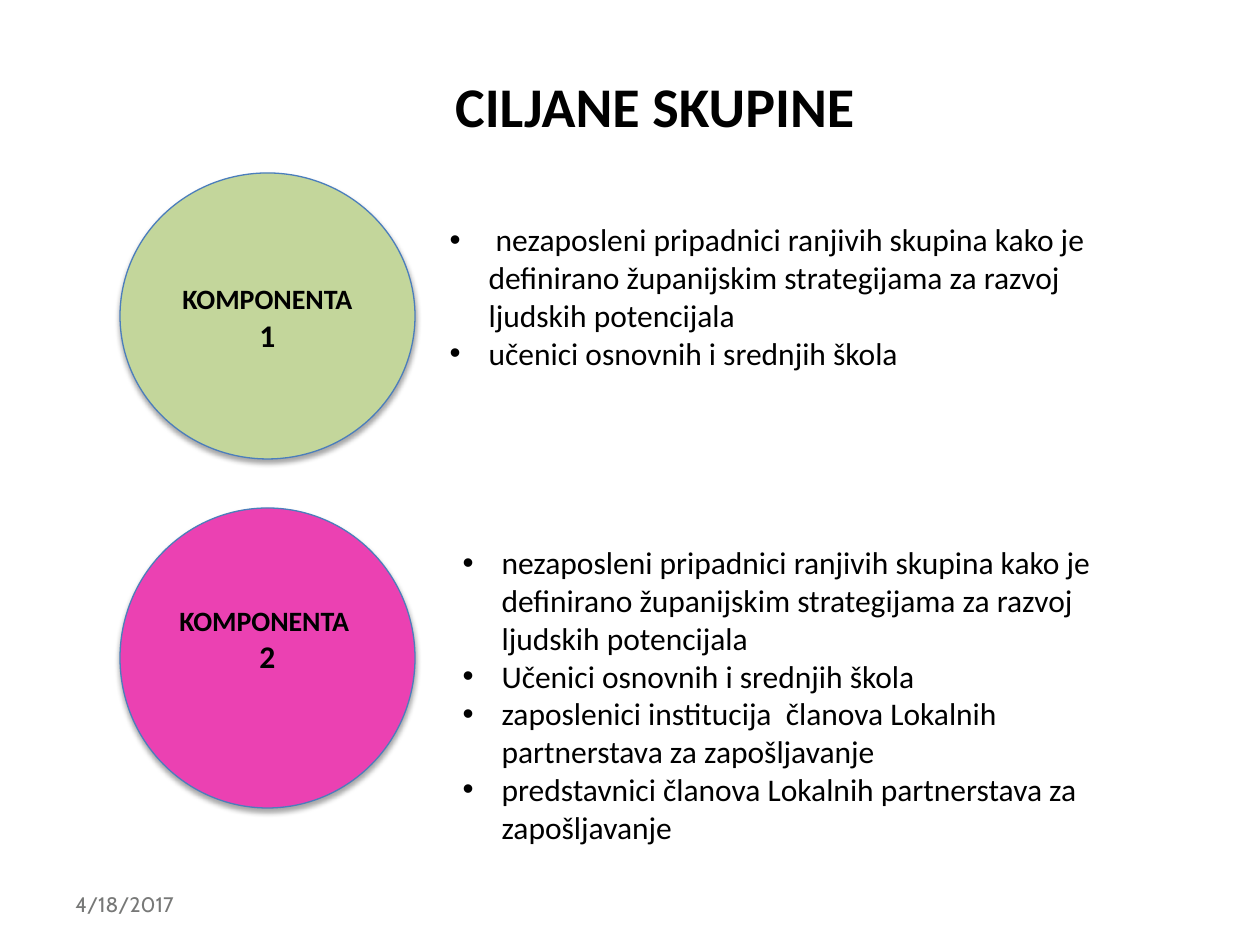
from lxml import etree
from pptx import Presentation
from pptx import util as u
from pptx.dml.color import RGBColor
from pptx.enum import shapes, text
from pptx.oxml import ns

PX = 914400 / 126


def box(*lengths):
    return [u.Emu(round(n * PX)) for n in lengths]


def style(r, size, color="000000", bold=False, name="Calibri"):
    r.font.size = u.Pt(size)
    r.font.name = name
    r.font.bold = bold
    r.font.color.rgb = RGBColor.from_string(color)


prs = Presentation()
prs.slide_width, prs.slide_height = box(1260, 945)
s = prs.slides.add_slide(prs.slide_layouts[3])

title = s.shapes.title
title.left, title.top, title.width, title.height = box(88, 38, 1134, 135)
tf = title.text_frame
tf.vertical_anchor = text.MSO_ANCHOR.MIDDLE
p = tf.paragraphs[0]
p.alignment = text.PP_ALIGN.CENTER
r = p.add_run()
r.text = "CILJANE SKUPINE"
style(r, 32, bold=True)

circles = [
    ((120, 173, 295, 286), "C3D69B", 6, [[("KOMPONENTA", 16), (" 1", 18)]]),
    ((120, 508, 295, 300), "EB41B2", 44, [[("KOMPONENTA ", 16)], [("2", 18)]]),
]
for place, fill, inset, lines in circles:
    sp = s.shapes.add_shape(shapes.MSO_SHAPE.OVAL, *box(*place))
    sp.fill.solid()
    sp.fill.fore_color.rgb = RGBColor.from_string(fill)
    sp.line.color.rgb = RGBColor.from_string("4B7EBC")
    sp.line.width = u.Pt(0.75)
    sp.shadow.inherit = False
    effects = sp._element.spPr.find(ns.qn("a:effectLst"))
    shadow = etree.SubElement(effects, ns.qn("a:outerShdw"), blurRad=str(u.Pt(3.1)),
                              dist=str(u.Pt(1.8)), dir="5400000", rotWithShape="0")
    color = etree.SubElement(shadow, ns.qn("a:srgbClr"), val="000000")
    etree.SubElement(color, ns.qn("a:alpha"), val="35000")
    tf = sp.text_frame
    tf.word_wrap = True
    tf.vertical_anchor = text.MSO_ANCHOR.MIDDLE
    tf.margin_bottom = box(inset)[0]
    for i, line in enumerate(lines):
        p = tf.add_paragraph() if i else tf.paragraphs[0]
        p.alignment = text.PP_ALIGN.CENTER
        for words, size in line:
            r = p.add_run()
            r.text = words
            style(r, size, bold=True)

goal = ("nezaposleni pripadnici ranjivih skupina kako je definirano "
        "županijskim strategijama za razvoj ljudskih potencijala")
lists = [
    (1, (437, 214, 680, 165), [" " + goal, "učenici osnovnih i srednjih škola"]),
    (2, (450, 537, 687, 318), [
        goal,
        "Učenici osnovnih i srednjih škola",
        "zaposlenici institucija  članova Lokalnih partnerstava za zapošljavanje",
        "predstavnici članova Lokalnih partnerstava za zapošljavanje",
    ]),
]
indent = box(39)[0]
for idx, place, items in lists:
    sp = s.placeholders[idx]
    sp.left, sp.top, sp.width, sp.height = box(*place)
    tf = sp.text_frame
    tf.word_wrap = True
    tf.auto_size = text.MSO_AUTO_SIZE.NONE
    tf.vertical_anchor = text.MSO_ANCHOR.TOP
    for i, item in enumerate(items):
        p = tf.add_paragraph() if i else tf.paragraphs[0]
        p.space_before = u.Pt(0)
        pPr = p._p.get_or_add_pPr()
        pPr.set("marL", str(indent))
        pPr.set("indent", str(-indent))
        etree.SubElement(pPr, ns.qn("a:buFont"), typeface="Arial")
        etree.SubElement(pPr, ns.qn("a:buChar"), char="•")
        r = p.add_run()
        r.text = item
        style(r, 18)

sp = s.shapes.add_textbox(*box(63, 879, 294, 50))
tf = sp.text_frame
tf.word_wrap = True
tf.vertical_anchor = text.MSO_ANCHOR.MIDDLE
r = tf.paragraphs[0].add_run()
r.text = "4/18/2017"
style(r, 12, "777877", name="Cabin")

prs.save("out.pptx")
